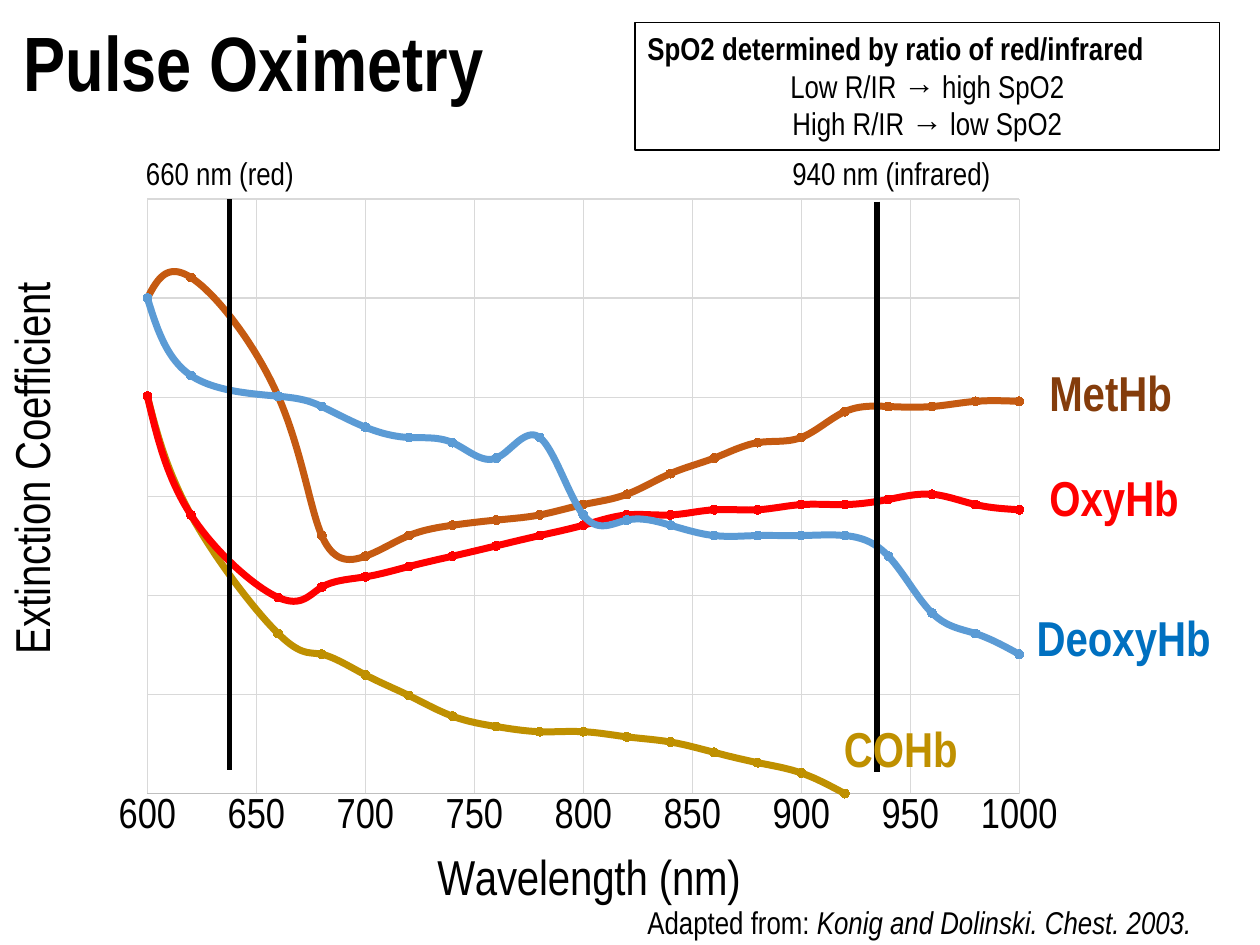
from lxml import etree
from pptx import Presentation
from pptx.chart.data import XyChartData
from pptx.dml.color import RGBColor
from pptx.enum.chart import XL_CHART_TYPE, XL_MARKER_STYLE, XL_TICK_MARK
from pptx.enum.shapes import MSO_CONNECTOR, MSO_SHAPE
from pptx.enum.text import MSO_ANCHOR, MSO_AUTO_SIZE, PP_ALIGN
from pptx.oxml.ns import qn
from pptx.util import Inches, Pt

FONT = "Arial Narrow"
BLACK = RGBColor(0x00, 0x00, 0x00)
BLUE = RGBColor(0x5B, 0x9B, 0xD5)
DARK_BLUE = RGBColor(0x00, 0x70, 0xC0)
RED = RGBColor(0xFF, 0x00, 0x00)
ORANGE = RGBColor(0xC5, 0x5A, 0x11)
BROWN = RGBColor(0x84, 0x3C, 0x0B)
GOLD = RGBColor(0xBF, 0x90, 0x00)
GRID = RGBColor(0xD9, 0xD9, 0xD9)
AXIS = RGBColor(0xBF, 0xBF, 0xBF)
SCATTER = XL_CHART_TYPE.XY_SCATTER_SMOOTH
CIRCLE = XL_MARKER_STYLE.CIRCLE
NO_TICK = XL_TICK_MARK.NONE
STRAIGHT = MSO_CONNECTOR.STRAIGHT
RECTANGLE = MSO_SHAPE.RECTANGLE
TOP, MIDDLE = MSO_ANCHOR.TOP, MSO_ANCHOR.MIDDLE
LEFT, CENTER = PP_ALIGN.LEFT, PP_ALIGN.CENTER
FIT = MSO_AUTO_SIZE.SHAPE_TO_FIT_TEXT

CHART_WIDTH = Inches(8.57)
CHART_HEIGHT = Inches(5.94)


def add_run(p, text, size, color=BLACK, bold=False, italic=False):
    r = p.add_run()
    r.text = text
    r.font.name = FONT
    r.font.size = Pt(size)
    r.font.bold = bold
    r.font.italic = italic
    r.font.color.rgb = color


def set_layout(parent, index, **inches):
    """Place a chart part, as child number index of parent, by inches inside the chart."""
    old = parent.find(qn("c:layout"))
    if old is not None:
        parent.remove(old)
    layout = etree.Element(qn("c:layout"))
    parent.insert(index, layout)
    manual = etree.SubElement(layout, qn("c:manualLayout"))
    if "w" in inches:
        etree.SubElement(manual, qn("c:layoutTarget")).set("val", "inner")
    for key in ("x", "y"):
        etree.SubElement(manual, qn(f"c:{key}Mode")).set("val", "edge")
    for key, value in inches.items():
        whole = CHART_WIDTH if key in "xw" else CHART_HEIGHT
        etree.SubElement(manual, qn(f"c:{key}")).set("val", str(Inches(value) / whole))


prs = Presentation()
prs.slide_width = Inches(10)
prs.slide_height = Inches(7.5)
s = prs.slides.add_slide(prs.slide_layouts[6])

# Title
tf = s.shapes.add_textbox(Inches(0.09), Inches(0.08), Inches(8.62), Inches(0.89)).text_frame
tf.word_wrap = True
tf.vertical_anchor = MIDDLE
tf.paragraphs[0].line_spacing = 0.9
add_run(tf.paragraphs[0], "Pulse Oximetry", 44, bold=True)

# Absorption curves; the gold one ends at 920 nm
wavelengths = [600, 620, *range(660, 1001, 20)]
curves = [
    (BLUE, [96, 81, 77, 75, 71, 69, 68, 65, 69, 54, 53, 52, 50, 50, 50, 50, 46, 35, 31, 27]),
    (RED, [77, 54, 38, 40, 42, 44, 46, 48, 50, 52, 54, 54, 55, 55, 56, 56, 57, 58, 56, 55]),
    (ORANGE, [96, 100, 77, 50, 46, 50, 52, 53, 54, 56, 58, 62, 65, 68, 69, 74, 75, 75, 76, 76]),
    (GOLD, [77, 54, 31, 27, 23, 19, 15, 13, 12, 12, 11, 10, 8, 6, 4, 0]),
]
data = XyChartData()
for n, (color, values) in enumerate(curves, 1):
    series = data.add_series(f"Series {n}")
    for x, y in zip(wavelengths, values):
        series.add_data_point(x, y)
chart = s.shapes.add_chart(SCATTER, Inches(0), Inches(1.46), CHART_WIDTH, CHART_HEIGHT, data).chart
chart.has_legend = False
chart.has_title = False
chart.font.name = "Calibri"
chart.font.size = Pt(10)
chart.font.color.rgb = BLACK
plot = chart.plots[0]
plot.vary_by_categories = False
for series, (color, values) in zip(plot.series, curves):
    series._element.get_or_add_smooth().val = True
    series.format.line.color.rgb = color
    series.format.line.width = Pt(4)
    series.marker.style = CIRCLE
    series.marker.size = 5
    series.marker.format.fill.solid()
    series.marker.format.fill.fore_color.rgb = color
    series.marker.format.line.fill.background()

# Axes
x_axis, y_axis = chart.category_axis, chart.value_axis
for axis, title, low, high, step, left, top in [
    (x_axis, "Wavelength (nm)", 600, 1000, 50, 3.4, 5.25),
    (y_axis, "Extinction Coefficient", 0, 115.2, 19.2, 0, 0.71),
]:
    axis.minimum_scale, axis.maximum_scale, axis.major_unit = low, high, step
    axis.major_tick_mark = axis.minor_tick_mark = NO_TICK
    axis.has_major_gridlines = True
    axis.major_gridlines.format.line.color.rgb = GRID
    axis.major_gridlines.format.line.width = Pt(0.75)
    tf = axis.axis_title.text_frame
    add_run(tf.paragraphs[0], title, 28)
    set_layout(axis.axis_title._element, 1, x=left, y=top)
y_axis.axis_title.text_frame._txBody.bodyPr.set("rot", "-5400000")
y_axis.visible = False
x_axis.format.line.color.rgb = AXIS
x_axis.format.line.width = Pt(0.75)
x_axis.tick_labels.font.name = FONT
x_axis.tick_labels.font.size = Pt(24)
x_axis.tick_labels.font.color.rgb = BLACK
set_layout(chart._chartSpace.chart.plotArea, 0, x=1.17, y=0.12, w=6.92, h=4.72)

# Wavelength markers
for x, top in [(1.82, 1.58), (6.96, 1.6)]:
    line = s.shapes.add_connector(STRAIGHT, Inches(x), Inches(top), Inches(x), Inches(top + 4.53))
    line.line.color.rgb = BLACK
    line.line.width = Pt(3)
    etree.SubElement(line._element.spPr, qn("a:effectLst"))

# Curve names, wavelength labels and credit
for text, italic_text, x, y, w, h, size, color, bold in [
    ("MetHb", "", 8.23, 2.83, 1.19, 0.57, 28, BROWN, True),
    ("OxyHb", "", 8.23, 3.66, 1.29, 0.57, 28, RED, True),
    ("DeoxyHb", "", 8.13, 4.77, 1.6, 0.57, 28, DARK_BLUE, True),
    ("COHb", "", 6.6, 5.65, 1.13, 0.57, 28, GOLD, True),
    ("660 nm (red)", "", 1.06, 1.17, 1.39, 0.4, 18, BLACK, False),
    ("940 nm (infrared)", "", 6.19, 1.17, 1.79, 0.4, 18, BLACK, False),
    ("Adapted from: ", "Konig and Dolinski. Chest. 2003.",
     5.04, 7.12, 4.58, 0.4, 18, BLACK, False),
]:
    tf = s.shapes.add_textbox(Inches(x), Inches(y), Inches(w), Inches(h)).text_frame
    tf.word_wrap = False
    tf.auto_size = FIT
    add_run(tf.paragraphs[0], text, size, color, bold)
    if italic_text:
        add_run(tf.paragraphs[0], italic_text, size, color, italic=True)

# Ratio box
sp = s.shapes.add_shape(RECTANGLE, Inches(5.04), Inches(0.18), Inches(4.64), Inches(1.01))
sp.shadow.inherit = False
sp.fill.background()
sp.line.color.rgb = BLACK
sp.line.width = Pt(0.75)
tf = sp.text_frame
tf.word_wrap = True
tf.auto_size = FIT
tf.vertical_anchor = TOP
for n, (text, align) in enumerate([
    ("SpO2 determined by ratio of red/infrared", LEFT),
    ("Low R/IR → high SpO2", CENTER),
    ("High R/IR → low SpO2", CENTER),
]):
    p = tf.add_paragraph() if n else tf.paragraphs[0]
    p.alignment = align
    add_run(p, text, 18, bold=n == 0)

prs.save("out.pptx")
